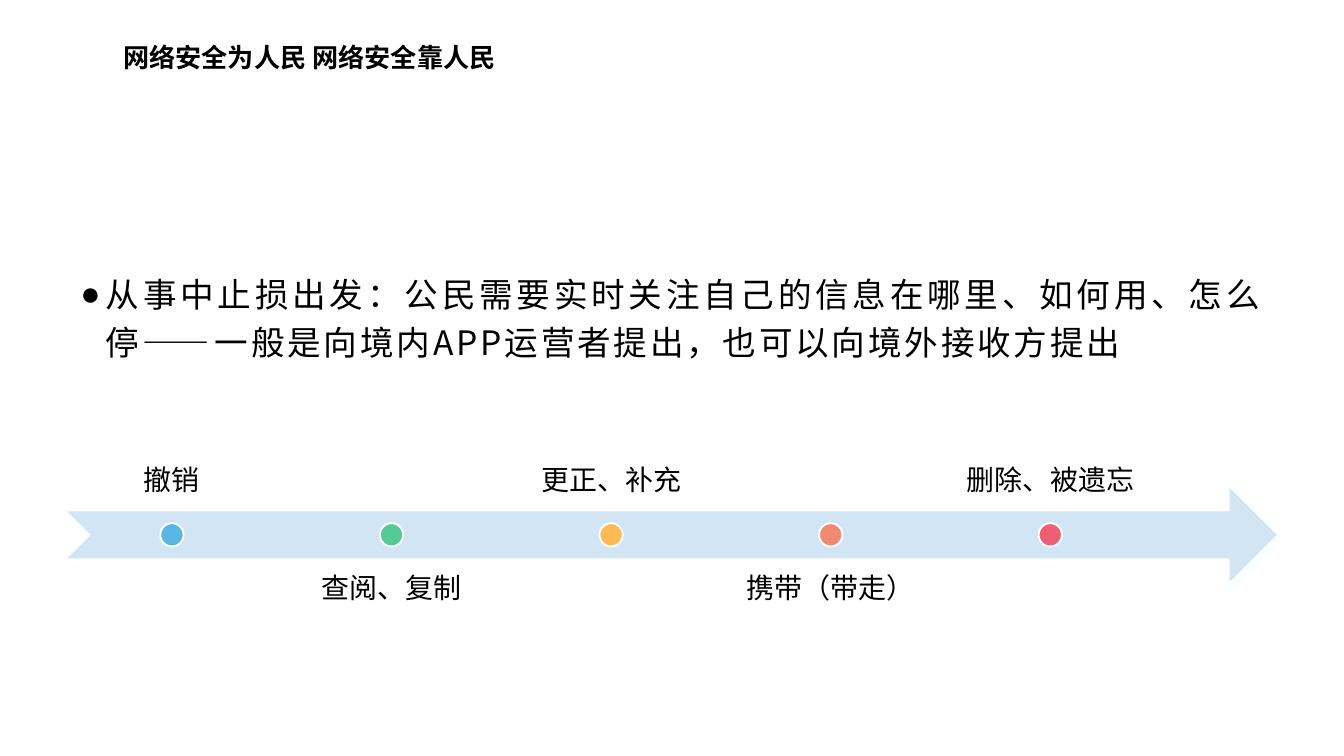
from lxml.etree import SubElement
from pptx import Presentation
from pptx.dml.color import RGBColor
from pptx.enum.shapes import MSO_SHAPE as Shape
from pptx.enum.text import MSO_ANCHOR as Anchor, PP_ALIGN as Align
from pptx.oxml.ns import qn
from pptx.util import Cm, Pt


def color(value):
    return RGBColor.from_string(value)


class Board:
    ink = "000000"
    sans = "Noto Sans CJK SC"

    def __init__(self, deck):
        self.page = deck.slides.add_slide(deck.slide_layouts[6])

    def text(self, words, left, top, width, height, size, font=sans, bold=False,
             align=Align.LEFT, anchor=Anchor.TOP, inset=None, leading=1.0,
             bullet=None, indent=0.48, tracking=0):
        box = self.page.shapes.add_textbox(Cm(left), Cm(top), Cm(width), Cm(height))
        frame = box.text_frame
        frame.word_wrap = True
        frame.vertical_anchor = anchor
        if inset is not None:
            frame.margin_left = frame.margin_right = Cm(inset)
            frame.margin_top = frame.margin_bottom = Cm(inset)
        para = frame.paragraphs[0]
        para.add_run().text = words
        para.alignment = align
        para.line_spacing = leading
        if bullet:
            layout = para._p.get_or_add_pPr()
            layout.set("marL", str(Cm(indent)))
            layout.set("indent", str(-Cm(indent)))
            SubElement(layout, qn("a:buFont"), typeface="Arial")
            SubElement(layout, qn("a:buChar"), char=bullet)
        para.font.size = Pt(size)
        para.font.bold = bold
        para.font.name = font
        para.font.color.rgb = color(self.ink)
        style = para._p.pPr.find(qn("a:defRPr"))
        style.set("spc", str(round(tracking * 100)))
        latin = style.find(qn("a:latin"))
        latin.addnext(SubElement(style, qn("a:ea"), typeface=self.sans))

    def shape(self, kind, left, top, width, height, fill, outline=None):
        shape = self.page.shapes.add_shape(kind, Cm(left), Cm(top), Cm(width), Cm(height))
        shape.shadow.inherit = False
        shape.fill.solid()
        shape.fill.fore_color.rgb = color(fill)
        if outline:
            shape.line.color.rgb = color(outline)
            shape.line.width = Pt(1)
        else:
            shape.line.fill.background()


def main():
    deck = Presentation()
    deck.slide_width, deck.slide_height = Cm(25.4), Cm(14.29)
    board = Board(deck)

    board.text("网络安全为人民 网络安全靠人民", 2.08, 0.66, 12.17, 0.86, 14, bold=True)
    board.text(
        "从事中止损出发：公民需要实时关注自己的信息在哪里、如何用、怎么停"
        "——一般是向境内APP运营者提出，也可以向境外接收方提出",
        1.27, 4.9, 22.86, 2.11, 18, align=Align.JUSTIFY, leading=1.2,
        bullet="●", tracking=1.5)

    left, middle, step = 1.27, 10.11, 4.15
    label_width, label_height, dot = 3.96, 1.78, 0.44
    board.shape(Shape.NOTCHED_RIGHT_ARROW, left, middle - 0.89, 22.86, 1.78, "D1E5F5")
    rights = [
        ("撤销", "58B6E5"),
        ("查阅、复制", "56CA95"),
        ("更正、补充", "FFBA55"),
        ("携带（带走）", "F18870"),
        ("删除、被遗忘", "EC5F74"),
    ]
    for index, (label, fill) in enumerate(rights):
        x = left + index * step
        above = index % 2 == 0
        board.text(label, x, 7.9 if above else 10.57, label_width, label_height, 15,
                   font="Arial", align=Align.CENTER, inset=0.3, leading=0.9,
                   anchor=Anchor.BOTTOM if above else Anchor.TOP)
        board.shape(Shape.OVAL, x + (label_width - dot) / 2, middle - dot / 2,
                    dot, dot, fill, outline="FFFFFF")

    deck.save("out.pptx")


if __name__ == "__main__":
    main()
